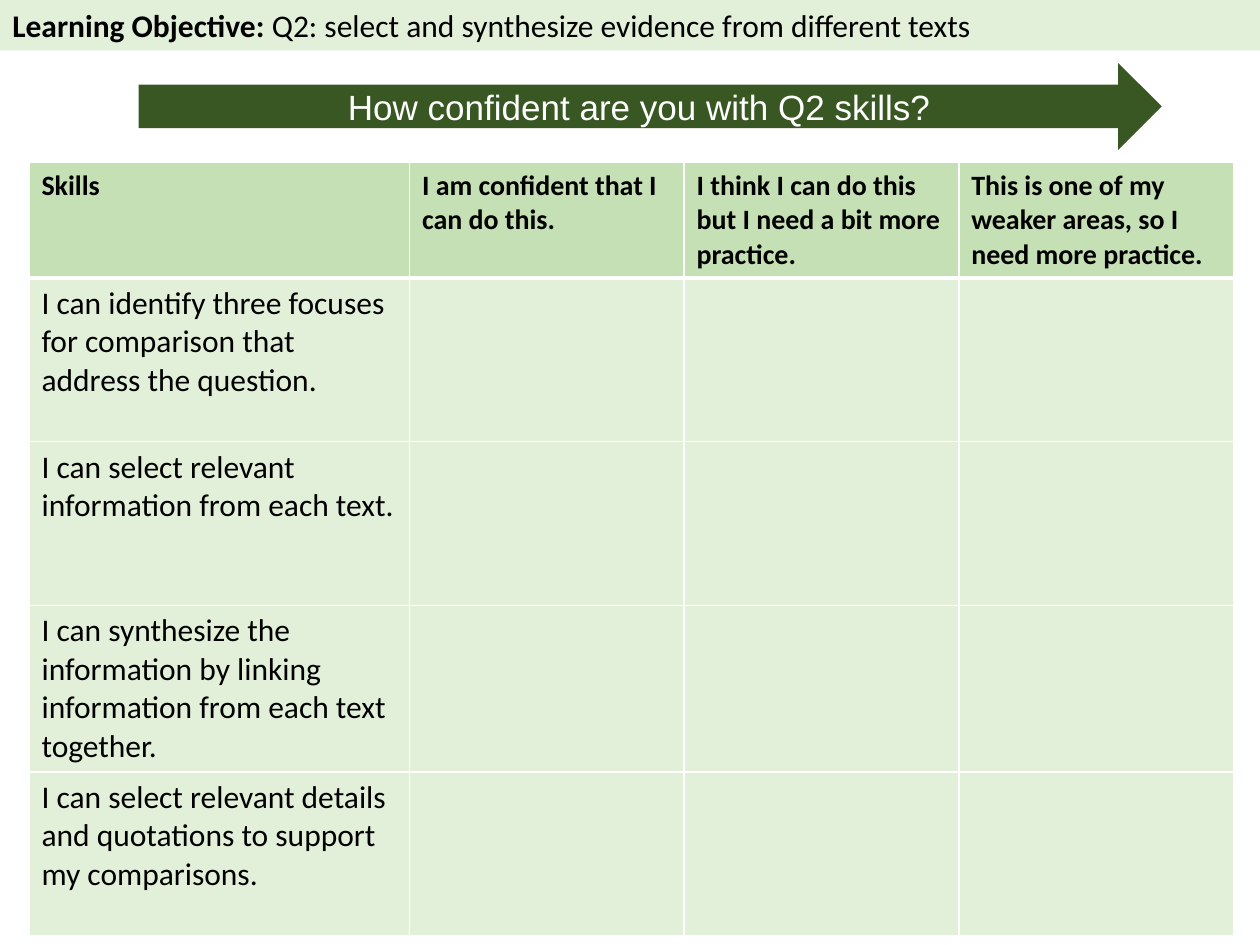
from pptx import Presentation
from pptx.dml.color import RGBColor
from pptx.enum.shapes import MSO_SHAPE
from pptx.enum.text import MSO_ANCHOR, PP_ALIGN
from pptx.oxml.ns import qn
from pptx.util import Inches, Pt
from lxml.etree import SubElement

BLACK = RGBColor(0x00, 0x00, 0x00)
WHITE = RGBColor(0xFF, 0xFF, 0xFF)
PALE_GREEN = RGBColor(0xE2, 0xF0, 0xD9)
LIGHT_GREEN = RGBColor(0xC5, 0xE0, 0xB4)
DARK_GREEN = RGBColor(0x38, 0x57, 0x23)

OBJECTIVE = ("Learning Objective: ",
             "Q2: select and synthesize evidence from different texts")
QUESTION = "How confident are you with Q2 skills?"
HEADINGS = [
    "Skills",
    "I am confident that I can do this.",
    "I think I can do this but I need a bit more practice.",
    "This is one of my weaker areas, so I need more practice.",
]
SKILLS = [
    "I can identify three focuses for comparison that address the question.",
    "I can select relevant information from each text.",
    "I can synthesize the information by linking information from each text together.",
    "I can select relevant details and quotations to support my comparisons.",
]
COLUMN_WIDTHS = [3.02, 2.18, 2.18, 2.18]
ROW_HEIGHTS = [0.89] + [1.3] * len(SKILLS)


def add_text(para, text, size=18, bold=False, font="Calibri", color=BLACK):
    span = para.add_run()
    span.text = text
    span.font.size = Pt(size)
    span.font.bold = bold
    span.font.name = font
    span.font.color.rgb = color


def add_block(page, preset, left, top, width, height, fill, align, anchor):
    """Add a filled shape without outline and return its first paragraph."""
    block = page.shapes.add_shape(preset, Inches(left), Inches(top),
                                  Inches(width), Inches(height))
    block.shadow.inherit = False
    block.fill.solid()
    block.fill.fore_color.rgb = fill
    block.line.fill.background()
    block.text_frame.word_wrap = True
    block.text_frame.vertical_anchor = anchor
    para = block.text_frame.paragraphs[0]
    para.alignment = align
    return para


def set_borders(cell, bottom):
    """Draw white borders, 1 pt on each side but the given top and bottom."""
    properties = cell._tc.get_or_add_tcPr()
    widths = {"a:lnL": 1, "a:lnR": 1, "a:lnT": 1, "a:lnB": bottom}
    for position, (side, width) in enumerate(widths.items()):
        line = SubElement(properties, qn(side), w=str(Pt(width)))
        fill = SubElement(line, qn("a:solidFill"))
        SubElement(fill, qn("a:srgbClr"), val=str(WHITE))
        properties.insert(position, line)


def add_skills_table(page, left, top):
    rows = [HEADINGS] + [[skill, "", "", ""] for skill in SKILLS]
    table = page.shapes.add_table(
        len(rows), len(HEADINGS), Inches(left), Inches(top),
        Inches(sum(COLUMN_WIDTHS)), Inches(sum(ROW_HEIGHTS))).table
    for column, width in zip(table.columns, COLUMN_WIDTHS):
        column.width = Inches(width)
    for index, (row, height, texts) in enumerate(zip(table.rows, ROW_HEIGHTS, rows)):
        row.height = Inches(height)
        heading = index == 0
        for cell, text in zip(row.cells, texts):
            cell.fill.solid()
            cell.fill.fore_color.rgb = LIGHT_GREEN if heading else PALE_GREEN
            set_borders(cell, bottom=3 if heading else 1)
            if text:
                add_text(cell.text_frame.paragraphs[0], text,
                         size=16 if heading else 18, bold=heading)


def main():
    deck = Presentation()
    deck.slide_width, deck.slide_height = Inches(10), Inches(7.5)
    page = deck.slides.add_slide(deck.slide_layouts[6])

    label, objective = OBJECTIVE
    banner = add_block(page, MSO_SHAPE.RECTANGLE, 0, 0, 10, 0.4, PALE_GREEN,
                       PP_ALIGN.LEFT, MSO_ANCHOR.TOP)
    add_text(banner, label, bold=True)
    add_text(banner, objective)

    arrow = add_block(page, MSO_SHAPE.RIGHT_ARROW, 1.1, 0.5, 8.12, 0.69, DARK_GREEN,
                      PP_ALIGN.CENTER, MSO_ANCHOR.MIDDLE)
    add_text(arrow, QUESTION, size=20, font="Arial", color=WHITE)

    add_skills_table(page, 0.23, 1.29)
    deck.save("out.pptx")


if __name__ == "__main__":
    main()
